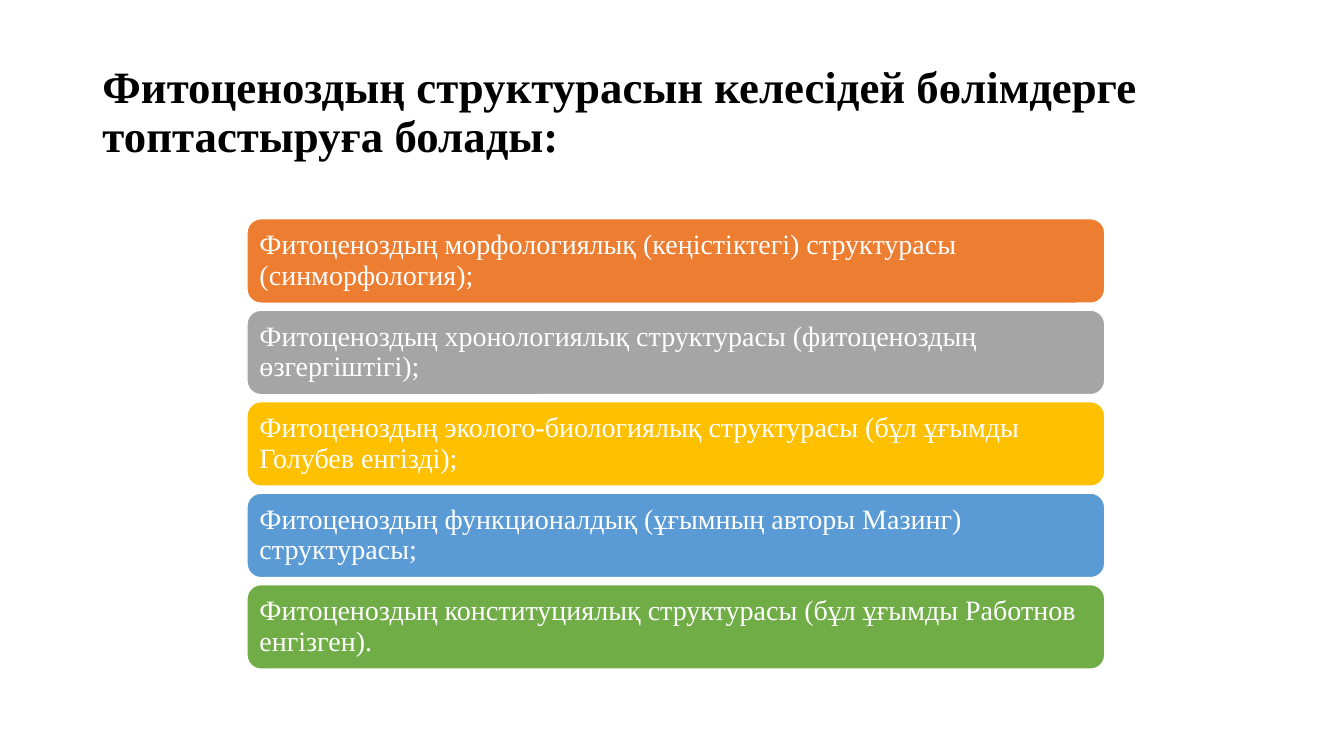
import dataclasses

import pptx
import pptx.dml.color
import pptx.enum.shapes
import pptx.enum.text
import pptx.shapes.autoshape
import pptx.slide
import pptx.text.text
import pptx.util

COLOURS = {
    "black": "000000",
    "white": "FFFFFF",
    "orange": "ED7D31",
    "grey": "A5A5A5",
    "yellow": "FFC000",
    "blue": "5B9BD5",
    "green": "70AD47",
}
FONT_NAME = "Times New Roman"
TITLE = "Фитоценоздың структурасын келесідей бөлімдерге топтастыруға болады:"

# Stack of bars, in points
BAR_LEFT, BAR_TOP = 176.4, 156.2
BAR_WIDTH, BAR_HEIGHT = 612.7, 60.4
BAR_PITCH = 65.34
BAR_MARGIN = 6


@dataclasses.dataclass(frozen=True)
class Bar:
    text: str
    colour: str


BARS = [
    Bar("Фитоценоздың морфологиялық (кеңістіктегі) структурасы (синморфология);", "orange"),
    Bar("Фитоценоздың хронологиялық структурасы (фитоценоздың өзгергіштігі);", "grey"),
    Bar("Фитоценоздың эколого-биологиялық структурасы (бұл ұғымды Голубев енгізді);", "yellow"),
    Bar("Фитоценоздың функционалдық (ұғымның авторы Мазинг) структурасы;", "blue"),
    Bar("Фитоценоздың конституциялық структурасы (бұл ұғымды Работнов енгізген).", "green"),
]


def colour(name: str) -> pptx.dml.color.RGBColor:
    return pptx.dml.color.RGBColor.from_string(COLOURS[name])


def write_text(frame: pptx.text.text.TextFrame, text: str, size: float,
               colour_name: str, bold: bool = False) -> None:
    frame.text = text
    frame.word_wrap = True
    frame.auto_size = pptx.enum.text.MSO_AUTO_SIZE.NONE
    frame.vertical_anchor = pptx.enum.text.MSO_ANCHOR.MIDDLE
    paragraph = frame.paragraphs[0]
    paragraph.alignment = pptx.enum.text.PP_ALIGN.LEFT
    paragraph.line_spacing = 0.9
    paragraph.space_before = pptx.util.Pt(0)
    font = paragraph.runs[0].font
    font.name = FONT_NAME
    font.size = pptx.util.Pt(size)
    font.bold = bold
    font.color.rgb = colour(colour_name)


def format_title(slide: pptx.slide.Slide) -> None:
    title = slide.shapes.title
    title.left, title.top = pptx.util.Pt(66), pptx.util.Pt(28.75)
    title.width, title.height = pptx.util.Pt(828), pptx.util.Pt(104.4)
    write_text(title.text_frame, TITLE, 32, "black", bold=True)


def draw_bar(slide: pptx.slide.Slide, bar: Bar, top: float) -> None:
    shape = slide.shapes.add_shape(
        pptx.enum.shapes.MSO_SHAPE.ROUNDED_RECTANGLE,
        pptx.util.Pt(BAR_LEFT), pptx.util.Pt(top),
        pptx.util.Pt(BAR_WIDTH), pptx.util.Pt(BAR_HEIGHT),
    )
    shape.shadow.inherit = False
    shape.fill.solid()
    shape.fill.fore_color.rgb = colour(bar.colour)
    shape.line.color.rgb = colour("white")
    shape.line.width = pptx.util.Pt(1)
    frame = shape.text_frame
    frame.margin_left = frame.margin_right = pptx.util.Pt(BAR_MARGIN)
    frame.margin_top = frame.margin_bottom = pptx.util.Pt(BAR_MARGIN)
    write_text(frame, bar.text, 20, "white")


def main() -> None:
    presentation = pptx.Presentation()
    presentation.slide_width = pptx.util.Pt(960)
    presentation.slide_height = pptx.util.Pt(540)
    slide = presentation.slides.add_slide(presentation.slide_layouts.get_by_name("Title Only"))

    # Heading
    format_title(slide)

    # Five coloured bars, evenly spaced
    for index, bar in enumerate(BARS):
        draw_bar(slide, bar, BAR_TOP + index * BAR_PITCH)

    presentation.save("out.pptx")


if __name__ == "__main__":
    main()
